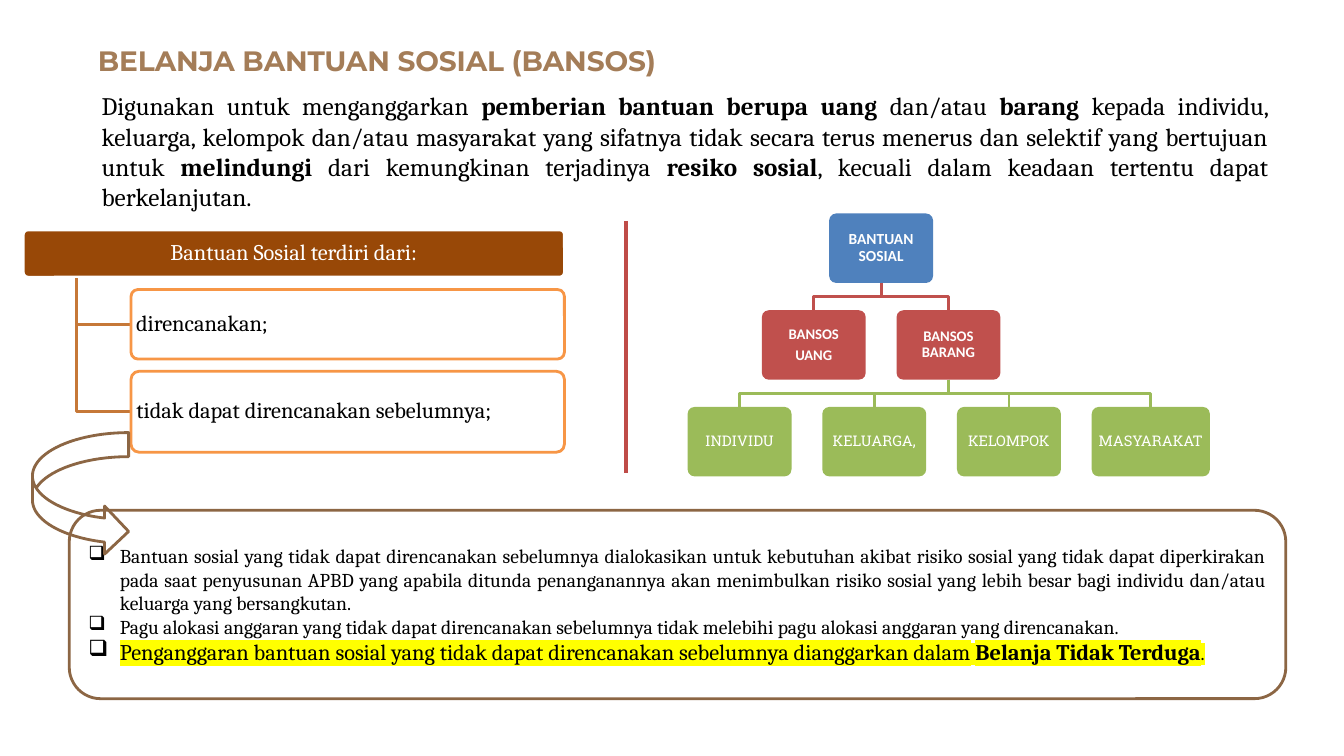
from lxml.etree import SubElement
from pptx import Presentation
from pptx.dml.color import RGBColor
from pptx.enum.shapes import MSO_CONNECTOR, MSO_SHAPE as SHAPE
from pptx.enum.text import MSO_ANCHOR, MSO_AUTO_SIZE, PP_ALIGN as ALIGN
from pptx.oxml.ns import qn
from pptx.util import Pt

COLORS = {
    "title": "A47D58", "black": "000000", "white": "FFFFFF", "header": "984807",
    "branch": "C67838", "item": "F79646", "note": "8C6644", "root": "4F81BD",
    "kind": "C0504D", "recipient": "9BBB59", "divider": "BF4C48", "marker": "FFFF00",
}
COLORS = {name: RGBColor.from_string(value) for name, value in COLORS.items()}

deck = Presentation()
deck.slide_width, deck.slide_height = Pt(960), Pt(540)
page = deck.slides.add_slide(deck.slide_layouts[5])


def add_block(place, paragraphs, font, color="black", fill=None, line=None,
              kind=SHAPE.ROUNDED_RECTANGLE, align=ALIGN.JUSTIFY, margins=(7.2, 3.6),
              corner=None, layout=None):
    """Add a shape; each paragraph is a list of (text, font changes) spans."""
    box = page.shapes.add_shape(kind, *map(Pt, place))
    box.shadow.inherit = False
    if corner:
        box.adjustments[0] = corner
    if fill:
        box.fill.solid()
        box.fill.fore_color.rgb = COLORS[fill]
    else:
        box.fill.background()
    if line:
        box.line.color.rgb = COLORS[line]
        box.line.width = Pt(2)
    else:
        box.line.fill.background()
    frame = box.text_frame
    frame.word_wrap = True
    frame.vertical_anchor = MSO_ANCHOR.MIDDLE
    frame.margin_left = frame.margin_right = Pt(margins[0])
    frame.margin_top = frame.margin_bottom = Pt(margins[1])
    for index, spans in enumerate(paragraphs):
        para = frame.add_paragraph() if index else frame.paragraphs[0]
        para.alignment = align
        for name, value in (layout or {}).items():
            setattr(para, name, value)
        for text, changes in spans:
            span = para.add_run()
            span.text = text
            for name, value in {**font, **changes}.items():
                setattr(span.font, name, value)
            span.font.color.rgb = COLORS[color]
    return box


def add_path(points, color):
    """Draw an open line through the points."""
    start, *rest = [(Pt(x), Pt(y)) for x, y in points]
    builder = page.shapes.build_freeform(*start)
    builder.add_line_segments(rest, close=False)
    path = builder.convert_to_shape()
    path.shadow.inherit = False
    path.fill.background()
    path.line.color.rgb = COLORS[color]
    path.line.width = Pt(2)


# Title
title = page.shapes.title
title.left, title.top, title.width, title.height = map(Pt, (69, 26, 729, 50))
frame = title.text_frame
frame.auto_size = MSO_AUTO_SIZE.NONE
frame.vertical_anchor = MSO_ANCHOR.TOP
frame.margin_left = frame.margin_right = frame.margin_bottom = 0
frame.margin_top = Pt(1.4)
para = frame.paragraphs[0]
para.alignment = ALIGN.LEFT
para.line_spacing = Pt(27.5)
span = para.add_run()
span.text = "BELANJA BANTUAN SOSIAL (BANSOS)"
for name, value in {"size": Pt(20), "name": "Montserrat", "bold": True}.items():
    setattr(span.font, name, value)
span.font.color.rgb = COLORS["title"]
para._p.get_or_add_pPr().set("marL", str(Pt(0.9)))
span._r.get_or_add_rPr().set("spc", "-10")

# Introduction
BOLD = {"bold": True}
add_block((59.8, 49.7, 859, 116.6), [[
    ("Digunakan untuk menganggarkan ", {}),
    ("pemberian bantuan berupa uang", BOLD),
    (" dan/atau ", {}),
    ("barang ", BOLD),
    ("kepada individu, keluarga, kelompok dan/atau masyarakat yang sifatnya tidak "
     "secara terus menerus dan selektif yang bertujuan untuk ", {}),
    ("melindungi ", BOLD),
    ("dari kemungkinan terjadinya ", {}),
    ("resiko sosial", BOLD),
    (", kecuali dalam keadaan tertentu dapat berkelanjutan.", {}),
]], {"name": "Cambria", "size": Pt(18)})

# Two kinds of social aid
list_font = {"name": "Cambria", "size": Pt(16)}
list_format = {"margins": (2.2, 1.4), "corner": 0.1,
               "layout": {"line_spacing": 0.9, "space_after": Pt(5.6)}}
add_block((16.6, 164.2, 386.6, 33.8), [[("Bantuan Sosial terdiri dari:", {})]],
          list_font, "white", "header", "white", align=ALIGN.CENTER, **list_format)
for text, top, height in [("direncanakan;", 206.8, 49.7),
                          ("tidak dapat direncanakan sebelumnya;", 265.2, 57.8)]:
    middle = top + height / 2
    add_path([(54.9, 198.7), (54.9, middle), (93.6, middle)], "branch")
    add_block((93.6, top, 309.6, height), [[(text, {})]], list_font,
              fill="white", line="item", **list_format)

# Notes on unplanned aid
notes = add_block((49.5, 364.5, 869, 134.6), [
    [("Bantuan sosial yang tidak dapat direncanakan sebelumnya dialokasikan untuk "
      "kebutuhan akibat risiko sosial yang tidak dapat diperkirakan pada saat "
      "penyusunan APBD yang apabila ditunda penanganannya akan menimbulkan risiko "
      "sosial yang lebih besar bagi individu dan/atau keluarga yang bersangkutan.", {})],
    [("Pagu alokasi anggaran yang tidak dapat direncanakan sebelumnya tidak melebihi "
      "pagu alokasi anggaran yang direncanakan.", {})],
    [("Penganggaran bantuan sosial yang tidak dapat direncanakan sebelumnya "
      "dianggarkan dalam", {"size": Pt(16)}),
     (" ", {}),
     ("Belanja Tidak Terduga", {"size": Pt(16), "bold": True}),
     (".", {})],
], {"name": "Cambria", "size": Pt(14)}, fill="white", line="note")
for para in notes.text_frame.paragraphs:
    properties = para._p.get_or_add_pPr()
    properties.set("marL", str(Pt(22.5)))
    properties.set("indent", str(Pt(-22.5)))
    SubElement(properties, qn("a:buChar")).set("char", "❑")
for span in notes.text_frame.paragraphs[-1].runs:
    properties = span._r.get_or_add_rPr()
    highlight = SubElement(properties, qn("a:highlight"))
    SubElement(highlight, qn("a:srgbClr")).set("val", str(COLORS["marker"]))
    properties.find(qn("a:solidFill")).addnext(highlight)

add_block((23.2, 309, 68.7, 87.8), [], {}, line="note", kind=SHAPE.CURVED_RIGHT_ARROW)

# Tree: each level hangs from a parent at a given centre
STEP, NODE_WIDTH, NODE_HEIGHT, PITCH = 69.1, 74.2, 49.6, 96.2
WIDE_NODE = 84.4
CALIBRI = {"name": "Calibri", "size": Pt(10.5), "bold": True}
SLAB = {"name": "Roboto Slab", "size": Pt(10.5)}
levels = [
    ("root", 592.3, None, {**CALIBRI, "size": Pt(11)}, [["BANTUAN SOSIAL"]]),
    ("kind", 544.2, 629.4, CALIBRI, [["BANSOS", "UANG"], ["BANSOS BARANG"]]),
    ("recipient", 491.2, 677.5, SLAB,
     [["INDIVIDU"], ["KELUARGA,"], ["KELOMPOK"], ["MASYARAKAT"]]),
]
for level, (color, left, parent, font, nodes) in enumerate(levels):
    top = 152.5 + level * STEP
    for column, lines in enumerate(nodes):
        width = WIDE_NODE if lines == ["MASYARAKAT"] else NODE_WIDTH
        node_left = left + column * PITCH
        center = node_left + width / 2
        if parent:
            bottom = top - STEP + NODE_HEIGHT
            bend = (top + bottom) / 2
            add_path([(parent, bottom), (parent, bend), (center, bend), (center, top)],
                     color)
        add_block((node_left, top, width, NODE_HEIGHT), [[(text, {})] for text in lines],
                  font, "white", color, align=ALIGN.CENTER, margins=(3, 3.6), corner=0.1,
                  layout={"line_spacing": 0.9, "space_after": Pt(3.7)})

divider = page.shapes.add_connector(MSO_CONNECTOR.STRAIGHT, *map(Pt, (450.7, 159, 450.7, 340)))
divider.left, divider.top, divider.height = Pt(447.1), Pt(157.7), Pt(180)
divider.line.color.rgb = COLORS["divider"]
divider.line.width = Pt(3)
SubElement(divider._element.spPr, qn("a:effectLst"))

deck.save("out.pptx")
